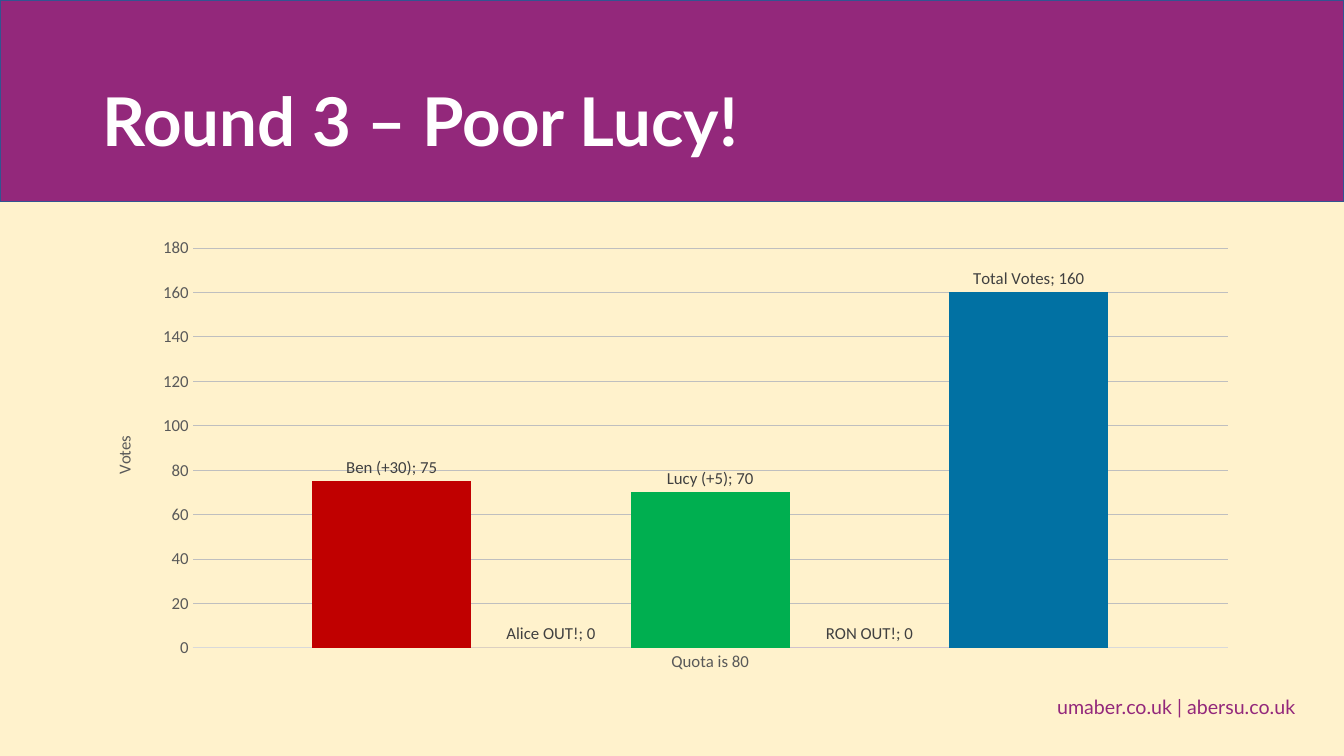
import dataclasses

import pptx
import pptx.chart.data
import pptx.dml.color
import pptx.enum.chart
import pptx.enum.shapes
import pptx.enum.text
import pptx.oxml
import pptx.oxml.ns
import pptx.util

Pt = pptx.util.Pt
PURPLE = "93287B"
GREY = "595959"


@dataclasses.dataclass(frozen=True)
class Candidate:
    name: str
    votes: int
    colour: str


@dataclasses.dataclass(frozen=True)
class Area:
    left: float
    top: float
    width: float
    height: float

    def points(self) -> tuple:
        return tuple(Pt(n) for n in dataclasses.astuple(self))


CANDIDATES = [
    Candidate("Ben (+30)", 75, "C00000"),
    Candidate("Alice OUT!", 0, "F7941F"),
    Candidate("Lucy (+5)", 70, "00AF50"),
    Candidate("RON OUT!", 0, "95277D"),
    Candidate("Total Votes", 160, "0171A3"),
]
BAND = Area(0, 0, 960, 144)
TITLE = Area(66, 44, 828, 89.5)
CHART = Area(66, 163.5, 828, 322.5)
FOOTER = Area(748, 492.5, 201.6, 24.5)
PLOT_SHARE = {"x": 0.0865, "y": 0.0425, "w": 0.893, "h": 0.886}


def rgb(colour: str) -> pptx.dml.color.RGBColor:
    return pptx.dml.color.RGBColor.from_string(colour)


def paint(fill, colour: str) -> None:
    fill.solid()
    fill.fore_color.rgb = rgb(colour)


def stroke(line, colour: str, width: float) -> None:
    paint(line.fill, colour)
    line.width = Pt(width)


def style(font, colour: str, **values) -> None:
    for name, value in values.items():
        setattr(font, name, value)
    font.color.rgb = rgb(colour)


def chart_xml(tag: str, inner: str):
    space = pptx.oxml.ns.nsdecls("c")
    return pptx.oxml.parse_xml(f"<c:{tag} {space}>{inner}</c:{tag}>")


def add_band(page) -> None:
    band = page.shapes.add_shape(
        pptx.enum.shapes.MSO_SHAPE.RECTANGLE, *BAND.points())
    band.shadow.inherit = False
    paint(band.fill, PURPLE)
    stroke(band.line, "325491", 1)
    page.shapes._spTree.insert(2, band._element)  # behind the title


def write_title(page) -> None:
    title = page.shapes.title
    title.left, title.top, title.width, title.height = TITLE.points()
    frame = title.text_frame
    frame.text = "Round 3 – Poor Lucy!"
    frame.auto_size = pptx.enum.text.MSO_AUTO_SIZE.NONE
    frame.vertical_anchor = pptx.enum.text.MSO_ANCHOR.MIDDLE
    para = frame.paragraphs[0]
    para.alignment = pptx.enum.text.PP_ALIGN.LEFT
    para.line_spacing = 0.9
    style(para.runs[0].font, "FFFFFF", name="Lato", size=Pt(48), bold=True)


def label_bar(bar) -> None:
    labels = bar.data_labels
    settings = {
        "show_value": True,
        "show_series_name": True,
        "position": pptx.enum.chart.XL_LABEL_POSITION.OUTSIDE_END,
    }
    for name, value in settings.items():
        setattr(labels, name, value)
    style(labels.font, "404040", name="Calibri", size=Pt(12))
    last_flag = labels._element.find(pptx.oxml.ns.qn("c:showBubbleSize"))
    last_flag.addnext(chart_xml("separator", "; "))


def format_axes(chart) -> None:
    for axis in (chart.category_axis, chart.value_axis):
        axis.major_tick_mark = pptx.enum.chart.XL_TICK_MARK.NONE
        axis.minor_tick_mark = pptx.enum.chart.XL_TICK_MARK.NONE
        style(axis.tick_labels.font, GREY, name="Calibri", size=Pt(12))
    stroke(chart.category_axis.format.line, "D9D9D9", 0.75)

    votes = chart.value_axis
    votes.minimum_scale, votes.maximum_scale, votes.major_unit = 0, 180, 20
    votes.format.line.fill.background()
    votes.has_major_gridlines = True
    stroke(votes.major_gridlines.format.line, "BFBFBF", 0.75)
    frame = votes.axis_title.text_frame
    frame.text = "Votes"
    frame._txBody.bodyPr.set("rot", "-5400000")
    frame._txBody.bodyPr.set("vert", "horz")
    style(frame.paragraphs[0].runs[0].font, GREY,
          name="Calibri", size=Pt(12), bold=False)


def place_plot(chart) -> None:
    """Fix the inner plot area as shares of the chart frame."""
    plot_area = chart._chartSpace.chart.plotArea
    for old in plot_area.findall(pptx.oxml.ns.qn("c:layout")):
        plot_area.remove(old)
    parts = ['<c:layoutTarget val="inner"/>']
    parts += [f'<c:{side}Mode val="edge"/>' for side in "xy"]
    parts += [f'<c:{side} val="{share}"/>' for side, share in PLOT_SHARE.items()]
    layout = f"<c:manualLayout>{''.join(parts)}</c:manualLayout>"
    plot_area.insert(0, chart_xml("layout", layout))


def add_votes_chart(page) -> None:
    data = pptx.chart.data.CategoryChartData()
    data.categories = ["Quota is 80"]
    for candidate in CANDIDATES:
        data.add_series(candidate.name, [candidate.votes])
    kind = pptx.enum.chart.XL_CHART_TYPE.COLUMN_CLUSTERED
    chart = page.shapes.add_chart(kind, *CHART.points(), data).chart
    chart.has_title = False
    chart.has_legend = False
    style(chart.font, "000000", name="Calibri", size=Pt(10))
    plot = chart.plots[0]
    plot.gap_width = 150
    plot.overlap = 0
    plot.vary_by_categories = False
    for bar, candidate in zip(plot.series, CANDIDATES):
        paint(bar.format.fill, candidate.colour)
        label_bar(bar)
    format_axes(chart)
    place_plot(chart)


def add_footer(page) -> None:
    frame = page.shapes.add_textbox(*FOOTER.points()).text_frame
    frame.word_wrap = True
    frame.auto_size = pptx.enum.text.MSO_AUTO_SIZE.SHAPE_TO_FIT_TEXT
    span = frame.paragraphs[0].add_run()
    span.text = "umaber.co.uk | abersu.co.uk"
    style(span.font, PURPLE, name="Lato", size=Pt(14))


def main() -> None:
    deck = pptx.Presentation()
    deck.slide_width, deck.slide_height = Pt(960), Pt(540)
    page = deck.slides.add_slide(deck.slide_layouts.get_by_name("Title Only"))
    paint(page.background.fill, "FFF2CC")
    add_band(page)
    write_title(page)
    add_votes_chart(page)
    add_footer(page)
    deck.save("out.pptx")


if __name__ == "__main__":
    main()
